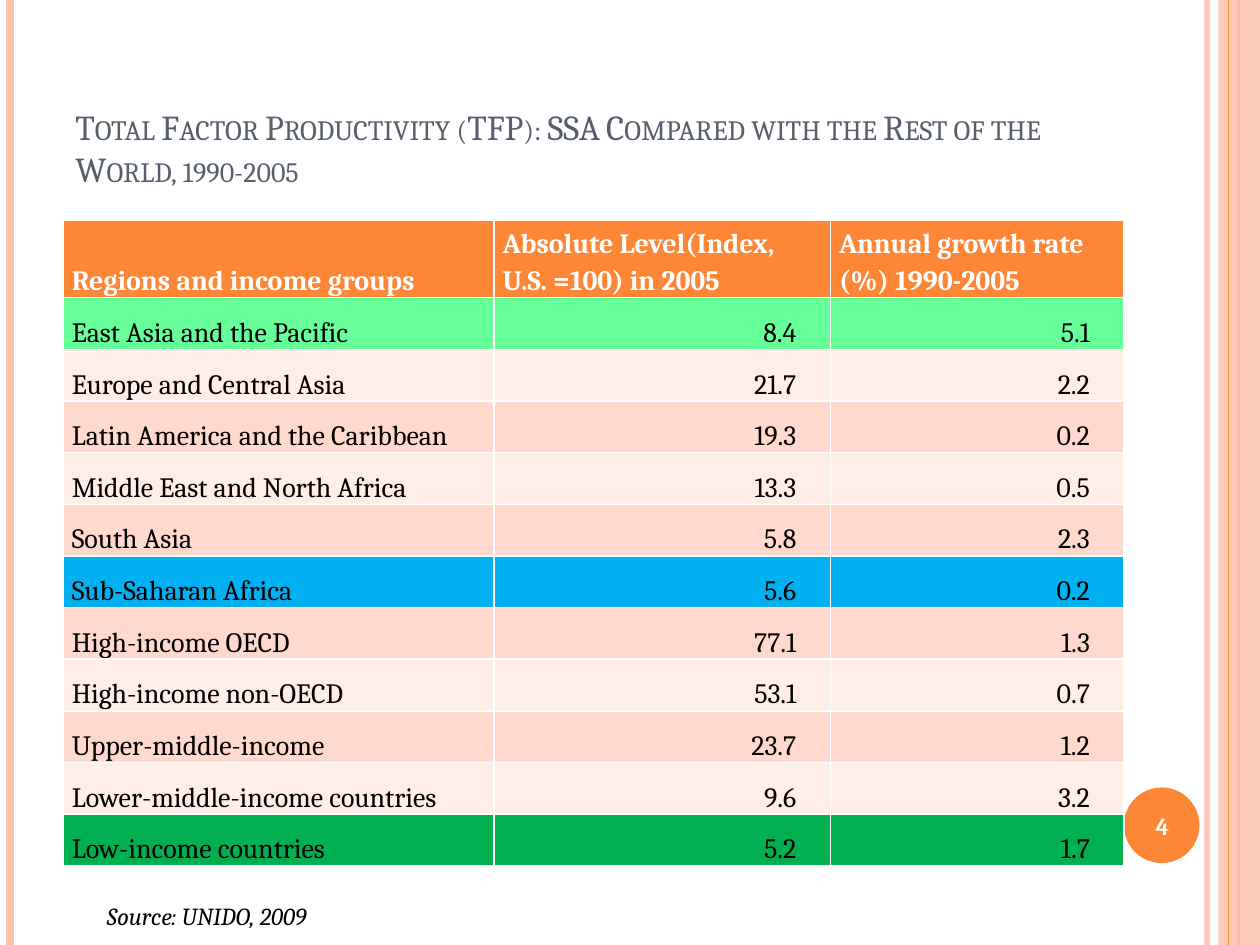
from lxml import etree
from pptx import Presentation
from pptx.dml.color import RGBColor
from pptx.enum import shapes as kinds, text as txt
from pptx.oxml.ns import qn
from pptx.util import Inches, Pt

FONT = "Cambria"
HUES = {
    "orange": "FE8637", "peach": "FEC3AE", "slate": "575F6D",
    "white": "FFFFFF", "black": "000000", "mint": "66FF99",
    "blue": "00B0F0", "green": "00B050", "dark": "FFD9CE", "light": "FFEDE8",
}
TITLE = ("Total Factor Productivity (TFP): SSA Compared with "
         "the Rest of the World, 1990-2005")
HEAD = ("Regions and income groups", "Absolute Level(Index, U.S. =100) in 2005",
        "Annual growth rate (%) 1990-2005")
ROWS = [
    ("East Asia and the Pacific", "8.4", "5.1"),
    ("Europe and Central Asia", "21.7", "2.2"),
    ("Latin America and the Caribbean", "19.3", "0.2"),
    ("Middle East and North Africa", "13.3", "0.5"),
    ("South Asia", "5.8", "2.3"),
    ("Sub-Saharan Africa", "5.6", "0.2"),
    ("High-income OECD", "77.1", "1.3"),
    ("High-income non-OECD", "53.1", "0.7"),
    ("Upper-middle-income", "23.7", "1.2"),
    ("Lower-middle-income countries", "9.6", "3.2"),
    ("Low-income countries", "5.2", "1.7"),
]
MARKED = {1: "mint", 6: "blue", 11: "green"}
WIDTHS = (3.42, 2.67, 2.33)
HIGH = 0.41
# x, hue, weight in points, opacity in percent
LINES = [(9.58, "peach", 3, 93), (0.08, "peach", 4.5, 100),
         (9.83, "orange", 1.5, 100), (9.75, "orange", 0.75, 100)]


def rgb(hue):
    return RGBColor.from_string(HUES[hue])


def fade(shape, pct):
    """Set the opacity of the first solid colour in a shape."""
    clr = next(shape._element.iter(qn("a:srgbClr")))
    etree.SubElement(clr, qn("a:alpha")).set("val", str(pct * 1000))


def style(frame, size, hue, bold=False, italic=False):
    for run in frame.paragraphs[0].runs:
        font = run.font
        font.name, font.size = FONT, Pt(size)
        font.bold, font.italic = bold, italic
        font.color.rgb = rgb(hue)


def rule(slide, x, hue, weight, pct):
    line = slide.shapes.add_connector(
        kinds.MSO_CONNECTOR.STRAIGHT, Inches(x), 0, Inches(x), Inches(7.5))
    line.line.color.rgb = rgb(hue)
    line.line.width = Pt(weight)
    if pct < 100:
        fade(line, pct)
    etree.SubElement(line._element.spPr, qn("a:effectLst"))


def solid(slide, kind, box, hue):
    shape = slide.shapes.add_shape(kind, *map(Inches, box))
    shape.shadow.inherit = False
    shape.fill.solid()
    shape.fill.fore_color.rgb = rgb(hue)
    shape.line.fill.background()
    return shape


def label(slide, words, box, anchor, size, hue, **look):
    frame = slide.shapes.add_textbox(*map(Inches, box)).text_frame
    frame.word_wrap = True
    frame.vertical_anchor = anchor
    frame.text = words
    style(frame, size, hue, **look)
    return frame


def grid(slide):
    data = [HEAD] + ROWS
    table = slide.shapes.add_table(
        len(data), len(HEAD), Inches(0.5), Inches(1.75),
        Inches(sum(WIDTHS)), Inches(HIGH * len(data))).table
    for col, wide in zip(table.columns, WIDTHS):
        col.width = Inches(wide)
    for r, row in enumerate(data):
        hue = MARKED.get(r, "dark" if r % 2 else "light") if r else "orange"
        for c, words in enumerate(row):
            cell = table.cell(r, c)
            number = r > 0 and c > 0
            cell.fill.solid()
            cell.fill.fore_color.rgb = rgb(hue)
            cell.vertical_anchor = txt.MSO_ANCHOR.BOTTOM
            cell.margin_top = cell.margin_bottom = 0
            cell.margin_left = Inches(0.07)
            cell.margin_right = Inches(0.27 if number else 0.07)
            cell.text_frame.text = words
            para = cell.text_frame.paragraphs[0]
            para.line_spacing, para.space_after = 1.15, Pt(10)
            if number:
                para.alignment = txt.PP_ALIGN.RIGHT
            style(cell.text_frame, 16, "black" if r else "white", bold=r == 0)


def main():
    deck = Presentation()
    deck.slide_width, deck.slide_height = Inches(10), Inches(7.5)
    slide = deck.slides.add_slide(deck.slide_layouts[6])

    for line in LINES[:3]:
        rule(slide, *line)
    band = solid(slide, kinds.MSO_SHAPE.RECTANGLE, (9.67, 0, 0.33, 7.5), "peach")
    fade(band, 87)
    rule(slide, *LINES[3])
    solid(slide, kinds.MSO_SHAPE.OVAL, (8.92, 6.25, 0.6, 0.6), "orange")

    anchor = txt.MSO_ANCHOR
    title = label(slide, TITLE, (0.5, 0.3, 8.17, 1.25), anchor.BOTTOM, 20, "slate")
    title.paragraphs[0].runs[0].font._element.set("cap", "small")
    grid(slide)
    page = label(slide, "4", (8.89, 6.27, 0.67, 0.57), anchor.MIDDLE, 14,
                 "white", bold=True)
    page.paragraphs[0].alignment = txt.PP_ALIGN.CENTER
    label(slide, "Source: UNIDO, 2009", (0.75, 7.1, 2.92, 0.34), anchor.TOP, 14,
          "black", italic=True)
    deck.save("out.pptx")


if __name__ == "__main__":
    main()
